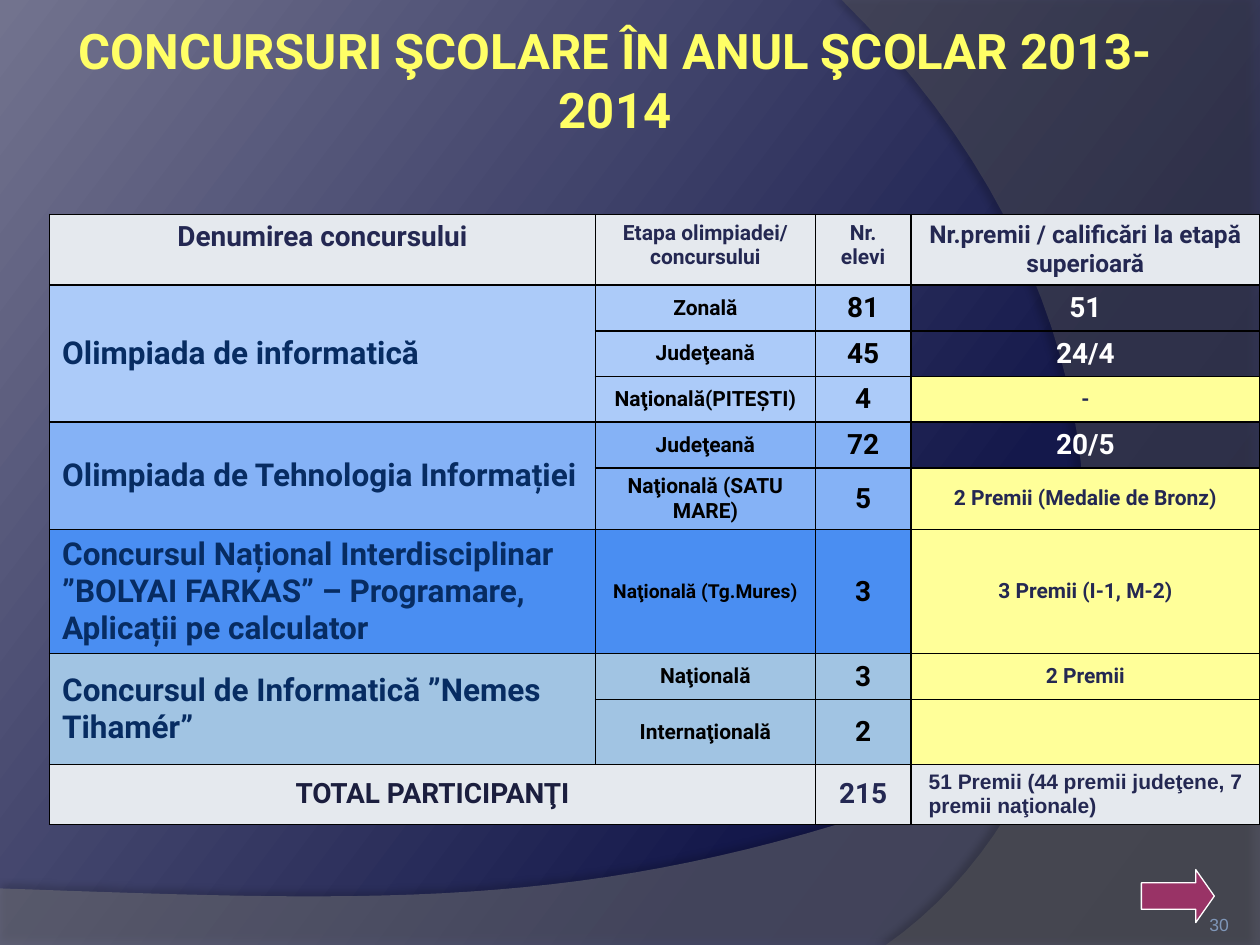
from collections import namedtuple

from lxml import etree
from pptx import Presentation
from pptx import util as u
from pptx.dml.color import RGBColor
from pptx.enum import shapes, text
from pptx.oxml import parse_xml
from pptx.oxml.ns import nsdecls, qn

Box = namedtuple("Box", "left top width height")

NIGHT = RGBColor(0x10, 0x14, 0x3F)
INDIGO = RGBColor(0x14, 0x18, 0x4B)
HAZE = RGBColor(0x72, 0x73, 0x8E)
WAVE_GRAY = RGBColor(0x7F, 0x7F, 0x7F)
ARC_GRAY = RGBColor(0x5E, 0x5E, 0x5E)
TITLE_YELLOW = RGBColor(0xFF, 0xFF, 0x66)
AWARD_YELLOW = RGBColor(0xFF, 0xFF, 0x99)
PALE = RGBColor(0xE5, 0xE9, 0xEE)
NAVY = RGBColor(0x24, 0x28, 0x52)
DEEP_NAVY = RGBColor(0x1B, 0x1E, 0x3E)
NAME_BLUE = RGBColor(0x07, 0x2C, 0x62)
BLACK = RGBColor(0, 0, 0)
WHITE = RGBColor(0xFF, 0xFF, 0xFF)
PLUM = RGBColor(0x99, 0x33, 0x66)
NUMBER_BLUE = RGBColor(0x7F, 0x96, 0xB8)

CENTER, LEFT, RIGHT = text.PP_ALIGN.CENTER, text.PP_ALIGN.LEFT, text.PP_ALIGN.RIGHT
TOP, MIDDLE, BOTTOM = (text.MSO_ANCHOR.TOP, text.MSO_ANCHOR.MIDDLE,
                       text.MSO_ANCHOR.BOTTOM)

COLUMNS = [11, 4.44, 1.92, 7.04]
ROWS = [1.43, 0.92, 0.92, 0.92, 0.92, 1.23, 2.5, 0.92, 1.31, 1.21]
HEADINGS = [("Denumirea concursului", 16),
            ("Etapa olimpiadei/\nconcursului", 12),
            ("Nr. elevi", 12),
            ("Nr.premii / calificări la etapă superioară", 14)]
# contest, colour, stages as (stage, pupils, awards)
CONTESTS = [
    ("Olimpiada de informatică", RGBColor(0xAC, 0xCB, 0xF9),
     [("Zonală", "81", "51"), ("Judeţeană", "45", "24/4"),
      ("Naţională(PITEȘTI)", "4", "-")]),
    ("Olimpiada de Tehnologia Informației", RGBColor(0x85, 0xB2, 0xF6),
     [("Judeţeană", "72", "20/5"),
      ("Naţională (SATU MARE)", "5", "2 Premii (Medalie de Bronz)")]),
    ("Concursul Național Interdisciplinar ”BOLYAI FARKAS” – Programare, "
     "Aplicații pe calculator", RGBColor(0x4A, 0x8E, 0xF2),
     [("Naţională (Tg.Mures)", "3", "3 Premii (I-1, M-2)")]),
    ("Concursul de Informatică ”Nemes Tihamér”", RGBColor(0xA1, 0xC4, 0xE3),
     [("Naţională", "3", "2 Premii"), ("Internaţională", "2", "")]),
]


def cm(box):
    return [u.Cm(length) for length in box]


def write(frame, words, size=12, color=NAVY, font="Roboto", bold=True, align=CENTER):
    for index, line in enumerate(words.split("\n")):
        para = frame.paragraphs[0] if index == 0 else frame.add_paragraph()
        para.alignment = align
        span = para.add_run()
        span.text = line
        span.font.size, span.font.name, span.font.bold = u.Pt(size), font, bold
        span.font.color.rgb = color


def set_margins(frame, margin=0):
    frame.margin_left = frame.margin_right = u.Cm(margin)
    frame.margin_top = frame.margin_bottom = u.Cm(margin)


def paint_background(page):
    fill = page.background.fill
    fill.gradient()
    fill.gradient_angle = 143
    first = fill.gradient_stops[0]
    stops = first._gs.getparent()
    stops.append(parse_xml(f'<a:gs {nsdecls("a")} pos="100000">'
                           '<a:srgbClr val="000000"/></a:gs>'))
    for stop, position, color in zip(fill.gradient_stops, (0, 0.3, 1),
                                     (NIGHT, INDIGO, HAZE)):
        stop.position = position
        stop.color.rgb = color


def curve(start, pull, push, end, steps=40):
    """Points along a cubic Bezier curve."""
    for step in range(steps + 1):
        t = step / steps
        weights = ((1 - t) ** 3, 3 * t * (1 - t) ** 2, 3 * t * t * (1 - t), t ** 3)
        yield tuple(sum(w * point[axis] for w, point in
                        zip(weights, (start, pull, push, end))) for axis in (0, 1))


def draw_sweep(page, points, color, opacity, shade, distance, direction):
    """Translucent outline with a soft shadow; points are in cm."""
    points = [(u.Cm(x), u.Cm(y)) for x, y in points]
    builder = page.shapes.build_freeform(*points[0])
    builder.add_line_segments(points[1:], close=True)
    sweep = builder.convert_to_shape()
    sweep.line.fill.background()
    sweep.fill.solid()
    sweep.fill.fore_color.rgb = color
    tone = sweep._element.spPr.find(qn("a:solidFill"))[0]
    etree.SubElement(tone, qn("a:alpha"), val=str(opacity * 1000))
    sweep._element.spPr.append(parse_xml(
        f'<a:effectLst {nsdecls("a")}><a:outerShdw blurRad="{u.Pt(4)}" '
        f'dist="{u.Pt(distance)}" dir="{direction * 60000}" rotWithShape="0">'
        f'<a:srgbClr val="000000"><a:alpha val="{shade * 1000}"/></a:srgbClr>'
        '</a:outerShdw></a:effectLst>'))


def draw_sweeps(page, box):
    right, bottom = box.left + box.width, box.top + box.height
    wave = curve((right, 13.2), (14.2, 18.52), (9.93, 18.26), (box.left, 17.91))
    draw_sweep(page, [(box.left, bottom), (right, bottom), *wave],
               WAVE_GRAY, 45, 35, 3.5, 270)
    arc = curve((17.86, bottom), (22.63, 15.72), (24.05, 6.99), (16.97, box.top))
    draw_sweep(page, [(right, box.top), (right, bottom), *arc],
               ARC_GRAY, 40, 45, 4, 180)


def place_title(page, box):
    title = page.shapes.title
    title.left, title.top, title.width, title.height = cm(box)
    title._element.getparent().append(title._element)  # in front of the sweeps
    frame = title.text_frame
    set_margins(frame)
    frame.word_wrap, frame.auto_size = True, text.MSO_AUTO_SIZE.NONE
    frame.vertical_anchor = BOTTOM
    write(frame, "CONCURSURI ŞCOLARE ÎN ANUL ŞCOLAR 2013-2014", 28, TITLE_YELLOW)


def fill_cell(cell, words, fill=None, anchor=MIDDLE, **look):
    cell.vertical_anchor = anchor
    if fill is None:
        cell.fill.background()
    else:
        cell.fill.solid()
        cell.fill.fore_color.rgb = fill
    if words:
        write(cell.text_frame, words, **look)


def add_borders(cell):
    for side in ("lnL", "lnR", "lnT", "lnB"):
        cell._tc.get_or_add_tcPr().append(parse_xml(
            f'<a:{side} {nsdecls("a")} w="{u.Pt(1)}"><a:solidFill>'
            f'<a:srgbClr val="{BLACK}"/></a:solidFill></a:{side}>'))


def fill_awards(cell, awards):
    if "/" in awards or awards.isdigit():
        fill_cell(cell, awards, size=16, color=WHITE)
    else:
        fill_cell(cell, awards, AWARD_YELLOW)


def place_table(page, box):
    table = page.shapes.add_table(len(ROWS), len(COLUMNS), *cm(box)).table
    table.first_row = table.horz_banding = False
    for column, width in zip(table.columns, COLUMNS):
        column.width = u.Cm(width)
    for row, height in zip(table.rows, ROWS):
        row.height = u.Cm(height)
    for cell in table.iter_cells():
        add_borders(cell)

    for index, (words, size) in enumerate(HEADINGS):
        fill_cell(table.cell(0, index), words, PALE, TOP, size=size)

    row = 1
    for contest, color, stages in CONTESTS:
        name = table.cell(row, 0)
        if len(stages) > 1:
            name.merge(table.cell(row + len(stages) - 1, 0))
        fill_cell(name, contest, color, size=18, color=NAME_BLUE, align=LEFT)
        for stage, pupils, awards in stages:
            size = 11 if "Mures" in stage else 12
            fill_cell(table.cell(row, 1), stage, color, size=size, color=BLACK)
            fill_cell(table.cell(row, 2), pupils, color, size=16, color=BLACK)
            fill_awards(table.cell(row, 3), awards)
            row += 1

    table.cell(row, 0).merge(table.cell(row, 1))
    fill_cell(table.cell(row, 0), "TOTAL PARTICIPANŢI", PALE, size=16, color=DEEP_NAVY)
    fill_cell(table.cell(row, 2), "215", PALE, size=16)
    total = table.cell(row, 3)
    total.margin_left = u.Cm(0.36)
    fill_cell(total, "51 Premii (44 premii judeţene, 7 premii naţionale)", PALE,
              font="Arial", align=LEFT)


def place_arrow(page, box):
    arrow = page.shapes.add_shape(shapes.MSO_SHAPE.RIGHT_ARROW, *cm(box))
    arrow.adjustments[0], arrow.adjustments[1] = 0.5, 0.35
    arrow.shadow.inherit = False
    arrow.fill.solid()
    arrow.fill.fore_color.rgb = PLUM
    arrow.line.color.rgb = WHITE
    arrow.line.width = u.Pt(0.75)


def place_page_number(page, box):
    frame = page.shapes.add_textbox(*cm(box)).text_frame
    set_margins(frame)
    frame.word_wrap = True
    frame.vertical_anchor = BOTTOM
    write(frame, "30", 10, NUMBER_BLUE, "Arial", bold=False, align=RIGHT)


def main():
    deck = Presentation()
    deck.slide_width, deck.slide_height = u.Cm(25.4), u.Cm(19.05)
    page = deck.slides.add_slide(deck.slide_layouts[5])
    paint_background(page)
    draw_sweeps(page, Box(0, 0, 25.4, 19.05))
    place_title(page, Box(0.5, 0.33, 23.8, 2.46))
    place_table(page, Box(1, 4.32, sum(COLUMNS), sum(ROWS)))
    place_arrow(page, Box(23.01, 17.53, 1.47, 1.07))
    place_page_number(page, Box(22.66, 17.83, 2.11, 1.02))
    deck.save("out.pptx")


if __name__ == "__main__":
    main()
